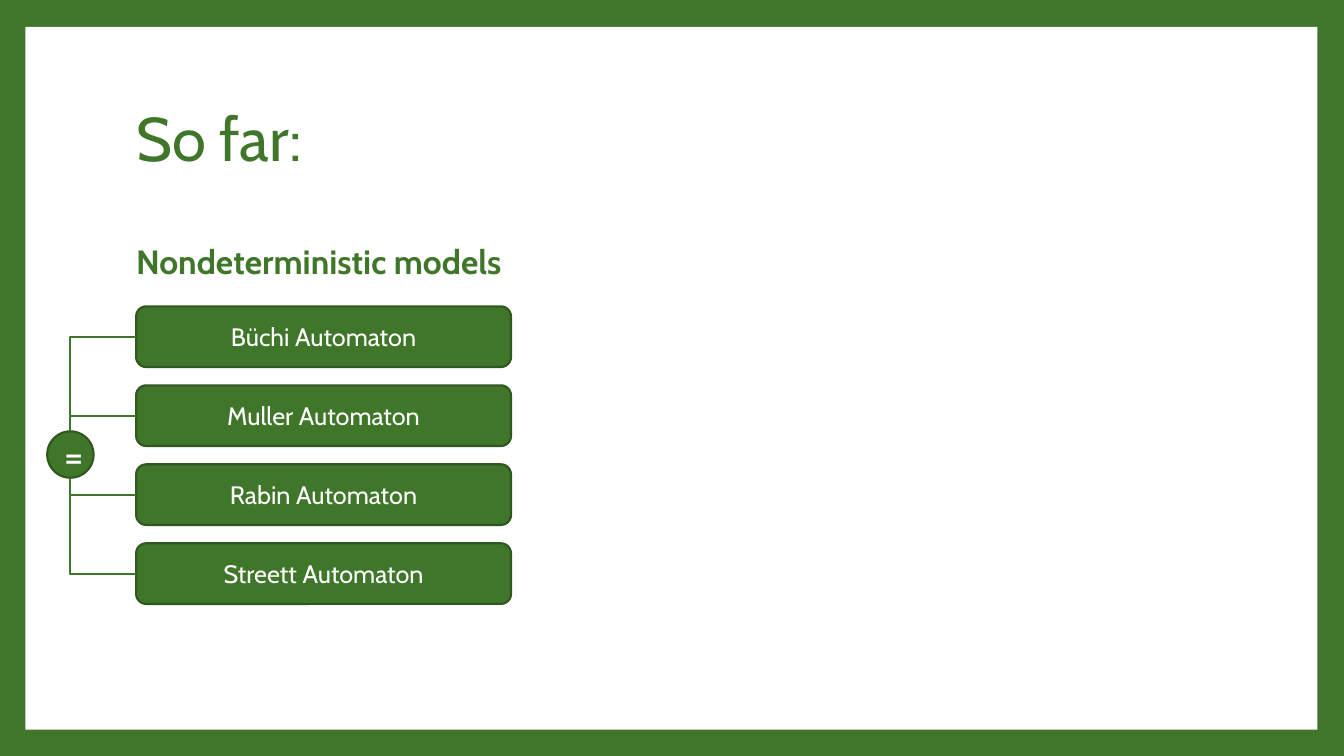
from pptx import Presentation
from pptx.dml.color import RGBColor
from pptx.enum.shapes import MSO_CONNECTOR, MSO_SHAPE
from pptx.enum.text import MSO_ANCHOR, PP_ALIGN
from pptx.oxml.ns import qn
from pptx.util import Cm, Pt
from lxml import etree

GREEN, DARK, WHITE = "3F762A", "2F571F", "FFFFFF"


def paint(color_format, hex_color):
    color_format.rgb = RGBColor.from_string(hex_color)


def write(sp, text, size, color=WHITE, bold=False, align=PP_ALIGN.CENTER, spacing=1.0):
    tf = sp.text_frame
    tf.word_wrap = True
    tf.vertical_anchor = MSO_ANCHOR.MIDDLE
    p = tf.paragraphs[0]
    p.alignment = align
    p.line_spacing = spacing
    r = p.add_run()
    r.text = text
    r.font.name = "Cabin"
    r.font.size = Pt(size)
    r.font.bold = bold
    paint(r.font.color, color)


prs = Presentation()
prs.slide_width = Cm(33.87)
prs.slide_height = Cm(19.05)
slide = prs.slides.add_slide(prs.slide_layouts[6])
slide.background.fill.solid()
paint(slide.background.fill.fore_color, GREEN)

panel = slide.shapes.add_shape(MSO_SHAPE.RECTANGLE, Cm(0.64), Cm(0.68), Cm(32.56), Cm(17.71))
panel.shadow.inherit = False
panel.fill.solid()
paint(panel.fill.fore_color, WHITE)
panel.line.fill.background()

for text, top, width, height, size, bold in [
    ("So far:", 1.7, 27.43, 3.76, 44, False),
    ("Nondeterministic models", 5.56, 13.2, 2.16, 24, True),
]:
    sp = slide.shapes.add_textbox(Cm(3.18), Cm(top), Cm(width), Cm(height))
    write(sp, text, size, color=GREEN, bold=bold, align=PP_ALIGN.LEFT, spacing=0.9)

box_left, box_top, box_width, box_height, pitch = 3.43, 7.72, 9.45, 1.53, 1.99
circle_left, circle_top, circle_size = 1.19, 10.87, 1.17
names = ["Büchi Automaton", "Muller Automaton", "Rabin Automaton", "Streett Automaton"]

nodes = [
    (MSO_SHAPE.ROUNDED_RECTANGLE, box_left, box_top + i * pitch, box_width, box_height, name, 18)
    for i, name in enumerate(names)
]
nodes.append((MSO_SHAPE.FLOWCHART_CONNECTOR, circle_left, circle_top, circle_size, circle_size, "=", 28))

for kind, left, top, width, height, text, size in nodes:
    sp = slide.shapes.add_shape(kind, Cm(left), Cm(top), Cm(width), Cm(height))
    sp.shadow.inherit = False
    sp.fill.solid()
    paint(sp.fill.fore_color, GREEN)
    paint(sp.line.color, DARK)
    sp.line.width = Pt(1.5)
    write(sp, text, size)

circle_x = circle_left + circle_size / 2
for i in range(len(names)):
    box_y = box_top + i * pitch + box_height / 2
    circle_y = circle_top if box_y < circle_top else circle_top + circle_size
    line = slide.shapes.add_connector(
        MSO_CONNECTOR.ELBOW, Cm(box_left), Cm(box_y), Cm(circle_x), Cm(circle_y)
    )
    paint(line.line.color, GREEN)
    line.line.width = Pt(1.5)
    props = line._element.spPr
    props.find(qn("a:prstGeom")).set("prst", "bentConnector2")
    etree.SubElement(props, qn("a:effectLst"))

prs.save("out.pptx")
